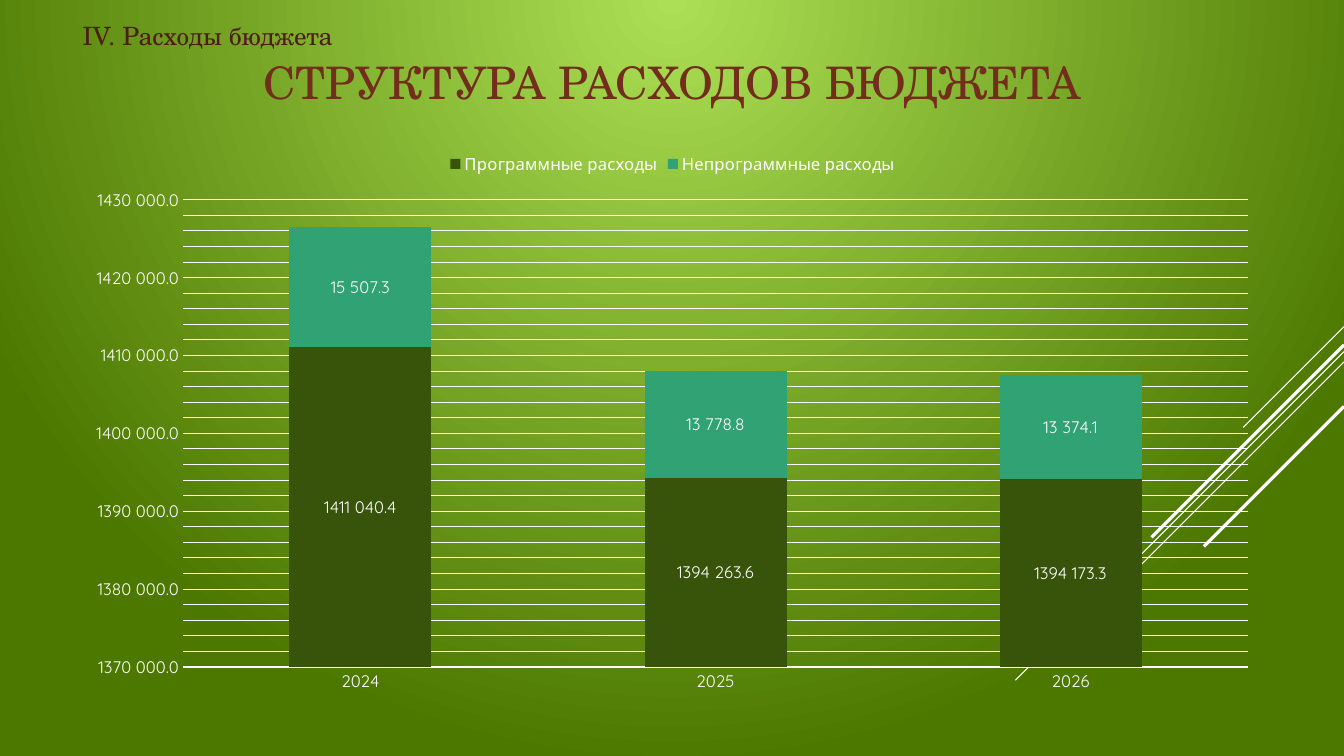
from copy import deepcopy
from lxml.etree import SubElement
from pptx import Presentation
from pptx.chart.data import CategoryChartData
from pptx.dml.color import RGBColor
from pptx.enum.chart import XL_CHART_TYPE as ChartType, XL_LABEL_POSITION as LabelPosition
from pptx.enum.chart import XL_LEGEND_POSITION as LegendPosition, XL_TICK_MARK as TickMark
from pptx.enum.shapes import MSO_CONNECTOR as Connector
from pptx.enum.text import MSO_ANCHOR as Anchor, PP_ALIGN as Align
from pptx.oxml.ns import qn
from pptx.util import Cm, Pt

WIDTH, HEIGHT = 33.87, 19.05
MARGIN, CONTENT_WIDTH = 1.83, 30.23
WHITE = "FFFFFF"
HEADING_FONT, CHART_FONT = "TeX Gyre Schola", "Quicksand"
NUMBER_FORMAT = r"#\ ##0.0"
YEARS = ["2024", "2025", "2026"]
EXPENSES = [
    ("Программные расходы", "38540A", [1411040.4, 1394263.6, 1394173.3]),
    ("Непрограммные расходы", "31A274", [15507.3, 13778.8, 13374.1]),
]
DIAGONALS = [(8.23, 2.54, 0.75), (8.86, 8.28, 0.75), (9.12, 5.26, 0.75),
             (8.69, 4.85, 2.25), (10.24, 3.53, 2.25)]


def color(value):
    """Turn a hex string into a colour."""
    return RGBColor.from_string(value)


def style_font(font, name, size, value):
    """Set the face, size and colour of a font."""
    font.name = name
    font.size = Pt(size)
    font.color.rgb = color(value)


def style_line(line, width):
    """Make a line white with the given width."""
    line.color.rgb = color(WHITE)
    line.width = Pt(width)


def paint_background(slide):
    """Fill the background with a radial gradient centred on the top edge."""
    fill = slide.background.fill
    fill.gradient()
    for stop, value, position in zip(fill.gradient_stops, ("ACDF55", "4C7800"), (0, 1)):
        stop.color.rgb = color(value)
        stop.position = position
    gradient = next(slide.element.iter(qn("a:gradFill")))
    gradient.remove(gradient.find(qn("a:lin")))
    radial = SubElement(gradient, qn("a:path"), path="circle")
    SubElement(radial, qn("a:fillToRect"), b="100000")


def add_diagonals(slide, right):
    """Draw the 45-degree lines that run down from the right edge."""
    for top, reach, width in DIAGONALS:
        line = slide.shapes.add_connector(
            Connector.STRAIGHT, Cm(right), Cm(top), Cm(right - reach), Cm(top + reach))
        style_line(line.line, width)
        SubElement(line.element.spPr, qn("a:effectLst"))


def add_heading(slide, box, text, size, value, alignment):
    """Place one line of heading text in a box."""
    shape = slide.shapes.add_textbox(*map(Cm, box))
    frame = shape.text_frame
    frame.word_wrap = True
    frame.vertical_anchor = Anchor.MIDDLE
    paragraph = frame.paragraphs[0]
    paragraph.alignment = alignment
    run = paragraph.add_run()
    run.text = text
    style_font(run.font, HEADING_FONT, size, value)


def style_axes(chart):
    """Set the scale, gridlines and text of both axes."""
    category, value = chart.category_axis, chart.value_axis
    for axis in (category, value):
        axis.major_tick_mark = axis.minor_tick_mark = TickMark.NONE
        style_font(axis.tick_labels.font, CHART_FONT, 11.9, WHITE)
    style_line(category.format.line, 0.75)
    value.format.line.fill.background()
    value.minimum_scale, value.maximum_scale = 1370000, 1430000
    value.major_unit, value.minor_unit = 10000, 2000
    value.has_major_gridlines = value.has_minor_gridlines = True
    style_line(value.major_gridlines.format.line, 0.75)
    major = next(chart.element.iter(qn("c:majorGridlines")))
    minor = next(chart.element.iter(qn("c:minorGridlines")))
    minor.append(deepcopy(major.find(qn("c:spPr"))))
    value.tick_labels.number_format = NUMBER_FORMAT
    value.tick_labels.number_format_is_linked = False


def place_plot(chart, **shares):
    """Fix the inner plot area as shares of the chart's size."""
    area = next(chart.element.iter(qn("c:plotArea")))
    for old in area.findall(qn("c:layout")):
        area.remove(old)
    layout = SubElement(area, qn("c:layout"))
    area.insert(0, layout)
    manual = SubElement(layout, qn("c:manualLayout"))
    settings = {"layoutTarget": "inner", "xMode": "edge", "yMode": "edge", **shares}
    for name, setting in settings.items():
        SubElement(manual, qn(f"c:{name}"), val=str(setting))


def add_expense_chart(slide, box):
    """Place the stacked column chart of expenses in a box."""
    data = CategoryChartData(number_format=NUMBER_FORMAT)
    data.categories = YEARS
    for name, _, values in EXPENSES:
        data.add_series(name, values)
    chart = slide.shapes.add_chart(ChartType.COLUMN_STACKED, *map(Cm, box), data).chart
    style_font(chart.font, CHART_FONT, 10, WHITE)
    chart.has_title = False
    chart.has_legend = True
    chart.legend.position = LegendPosition.TOP
    chart.legend.include_in_layout = False
    style_font(chart.legend.font, CHART_FONT, 11.9, WHITE)
    style_axes(chart)
    place_plot(chart, x=0.092, y=0.103, w=0.888, h=0.832)
    plot = chart.plots[0]
    plot.gap_width, plot.overlap = 150, 100
    plot.vary_by_categories = False
    for series, (_, value, _) in zip(plot.series, EXPENSES):
        series.format.fill.solid()
        series.format.fill.fore_color.rgb = color(value)
        labels = series.data_labels
        labels.show_value = True
        labels.position = LabelPosition.CENTER
        labels.number_format = NUMBER_FORMAT
        labels.number_format_is_linked = False
        style_font(labels.font, CHART_FONT, 11.9, WHITE)


def main():
    """Build the slide and save it."""
    presentation = Presentation()
    presentation.slide_width, presentation.slide_height = Cm(WIDTH), Cm(HEIGHT)
    slide = presentation.slides.add_slide(presentation.slide_layouts[6])
    paint_background(slide)
    add_diagonals(slide, WIDTH)
    add_expense_chart(slide, (MARGIN, 3.58, CONTENT_WIDTH, 14.15))
    add_heading(slide, (MARGIN, 0.48, CONTENT_WIDTH, 0.84),
                "IV. Расходы бюджета", 18, "4C1E14", Align.LEFT)
    add_heading(slide, (MARGIN, 1.32, CONTENT_WIDTH, 1.45),
                "СТРУКТУРА РАСХОДОВ БЮДЖЕТА", 32, "722D1D", Align.CENTER)
    presentation.save("out.pptx")


if __name__ == "__main__":
    main()
